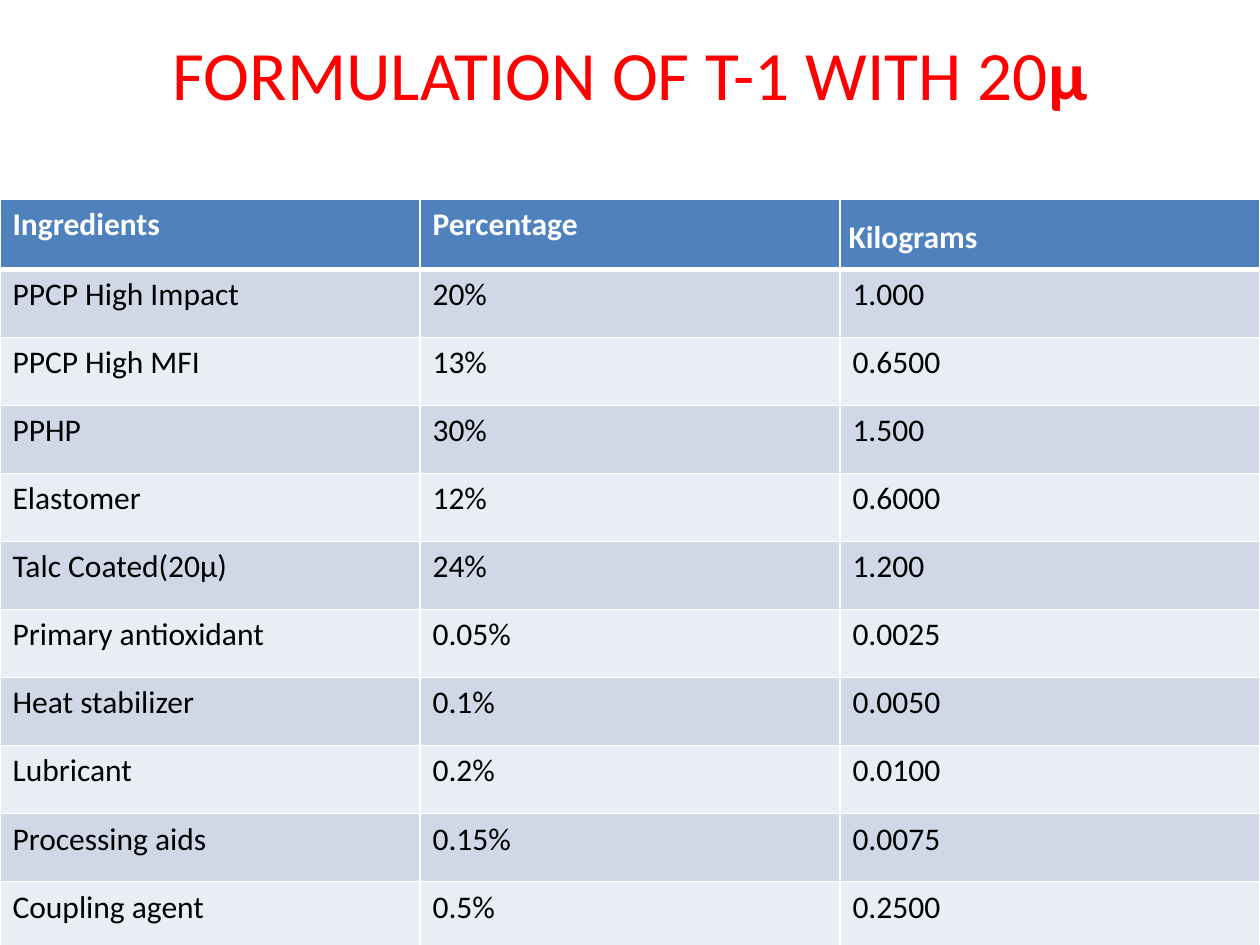
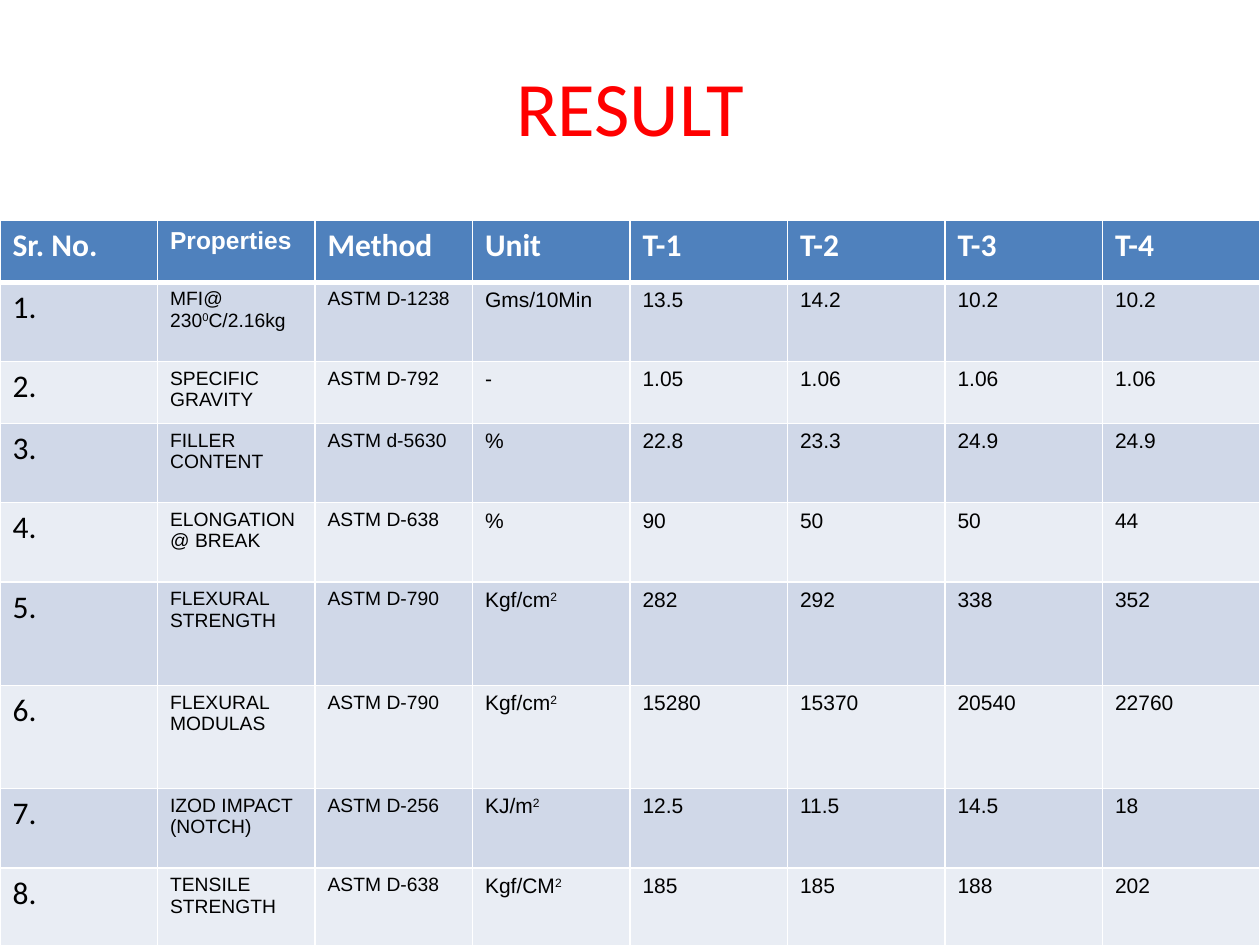
import pptx
import pptx.util
import pptx.dml.color
import pptx.enum.text
import pptx.oxml
import pptx.oxml.ns

Inches = pptx.util.Inches
Pt = pptx.util.Pt
COLORS = {"title": "FF0000", "header": "4F81BD", "odd": "D0D8E8", "even": "E9EDF4",
          "line": "FFFFFF", "header_text": "FFFFFF", "text": "000000"}
THIN, THICK = 1, 3

INGREDIENTS = [
    ("Ingredients", "Percentage", "Kilograms"),
    ("PPCP High Impact", "20%", "1.000"),
    ("PPCP High MFI", "13%", "0.6500"),
    ("PPHP", "30%", "1.500"),
    ("Elastomer", "12%", "0.6000"),
    ("Talc Coated(20µ)", "24%", "1.200"),
    ("Primary antioxidant", "0.05%", "0.0025"),
    ("Heat stabilizer", "0.1%", "0.0050"),
    ("Lubricant", "0.2%", "0.0100"),
    ("Processing aids", "0.15%", "0.0075"),
    ("Coupling agent", "0.5%", "0.2500"),
]
RESULTS = [
    ("Sr. No.", "Properties", "Method", "Unit", "T-1", "T-2", "T-3", "T-4"),
    ("1.", "MFI@ 230^0^C/2.16kg", "ASTM D-1238", "Gms/10Min", "13.5", "14.2", "10.2", "10.2"),
    ("2.", "SPECIFIC GRAVITY", "ASTM D-792", "-", "1.05", "1.06", "1.06", "1.06"),
    ("3.", "FILLER CONTENT", "ASTM d-5630", "%", "22.8", "23.3", "24.9", "24.9"),
    ("4.", "ELONGATION@ BREAK", "ASTM D-638", "%", "90", "50", "50", "44"),
    ("5.", "FLEXURAL STRENGTH", "ASTM D-790", "Kgf/cm^2^", "282", "292", "338", "352"),
    ("6.", "FLEXURAL MODULAS", "ASTM D-790", "Kgf/cm^2^", "15280", "15370", "20540", "22760"),
    ("7.", "IZOD IMPACT (NOTCH)", "ASTM D-256", "KJ/m^2^", "12.5", "11.5", "14.5", "18"),
    ("8.", "TENSILE STRENGTH", "ASTM D-638", "Kgf/CM^2^", "185", "185", "188", "202"),
]
RESULT_HEIGHTS = [0.49, 0.63, 0.49, 0.63, 0.63, 0.82, 0.82, 0.63, 0.63]


def rgb(name):
    return pptx.dml.color.RGBColor.from_string(COLORS[name])


def add_text(p, text, size=18, font="Calibri", color="text", bold=False):
    for i, part in enumerate(text.split("^")):
        if not part:
            continue
        r = p.add_run()
        r.text = part
        r.font.size = Pt(size)
        r.font.name = font
        r.font.bold = bold
        r.font.color.rgb = rgb(color)
        if i % 2:
            r.font._element.set("baseline", "30000")


def set_borders(cell, top, bottom):
    tc_pr = cell._tc.get_or_add_tcPr()
    widths = {"lnL": THIN, "lnR": THIN, "lnT": top, "lnB": bottom}
    for i, (tag, width) in enumerate(widths.items()):
        tc_pr.insert(i, pptx.oxml.parse_xml(
            f'<a:{tag} {pptx.oxml.ns.nsdecls("a")} w="{Pt(width)}"><a:solidFill>'
            f'<a:srgbClr val="{COLORS["line"]}"/></a:solidFill></a:{tag}>'))


def add_title(s, box, runs, size, anchor):
    sp = s.shapes.title
    sp.left, sp.top, sp.width, sp.height = [Inches(v) for v in box]
    tf = sp.text_frame
    tf.word_wrap = True
    tf.auto_size = pptx.enum.text.MSO_AUTO_SIZE.NONE
    tf.vertical_anchor = anchor
    p = tf.paragraphs[0]
    p.alignment = pptx.enum.text.PP_ALIGN.CENTER
    for text, bold in runs:
        add_text(p, text, size=size, color="title", bold=bold)
    return tf


def add_grid(s, box, rows, heights, cell_format):
    x, y, w, h = [Inches(v) for v in box]
    table = s.shapes.add_table(len(rows), len(rows[0]), x, y, w, h).table
    for column in table.columns:
        column.width = w // len(rows[0])
    for i, (row, height) in enumerate(zip(rows, heights)):
        table.rows[i].height = Inches(height)
        for j, text in enumerate(row):
            cell = table.cell(i, j)
            cell.fill.solid()
            cell.fill.fore_color.rgb = rgb("header" if i == 0 else "odd" if i % 2 else "even")
            set_borders(cell, THICK if i == 1 else THIN, THICK if i == 0 else THIN)
            add_text(cell.text_frame.paragraphs[0], text, bold=i == 0,
                     color="text" if i else "header_text", **cell_format(i, j))
    return table


def result_format(i, j):
    if i == 0:
        return {"size": 14, "font": "Arial"} if j == 1 else {}
    if j == 0:
        return {}
    return {"size": 11 if j < 3 else 12, "font": "Arial"}


def formulation_slide(prs):
    s = prs.slides.add_slide(prs.slide_layouts[5])
    tf = add_title(s, (0.5, 0.3, 9, 1.25), [("FORMULATION OF T-1 WITH 20", False), ("µ", True)],
                   39.6, pptx.enum.text.MSO_ANCHOR.TOP)
    tf.margin_top = 0
    tf.paragraphs[0].line_spacing = 0.95
    heights = [0.56] + [0.54] * (len(INGREDIENTS) - 1)
    table = add_grid(s, (0, 1.58, 10, 5.93), INGREDIENTS, heights, lambda i, j: {})
    kilograms = table.cell(0, 2)
    kilograms.margin_left = kilograms.margin_right = Inches(0.07)
    kilograms.margin_top = kilograms.margin_bottom = 0
    kilograms.text_frame.paragraphs[0].line_spacing = 1.5


def result_slide(prs):
    s = prs.slides.add_slide(prs.slide_layouts[5])
    add_title(s, (0, 0, 10, 1.67), [("RESULT", False)], 44, pptx.enum.text.MSO_ANCHOR.MIDDLE)
    add_grid(s, (0, 1.75, 10, 5.75), RESULTS, RESULT_HEIGHTS, result_format)


def main():
    prs = pptx.Presentation()
    prs.slide_width, prs.slide_height = Inches(10), Inches(7.5)
    formulation_slide(prs)
    result_slide(prs)
    prs.save("out.pptx")


if __name__ == "__main__":
    main()
